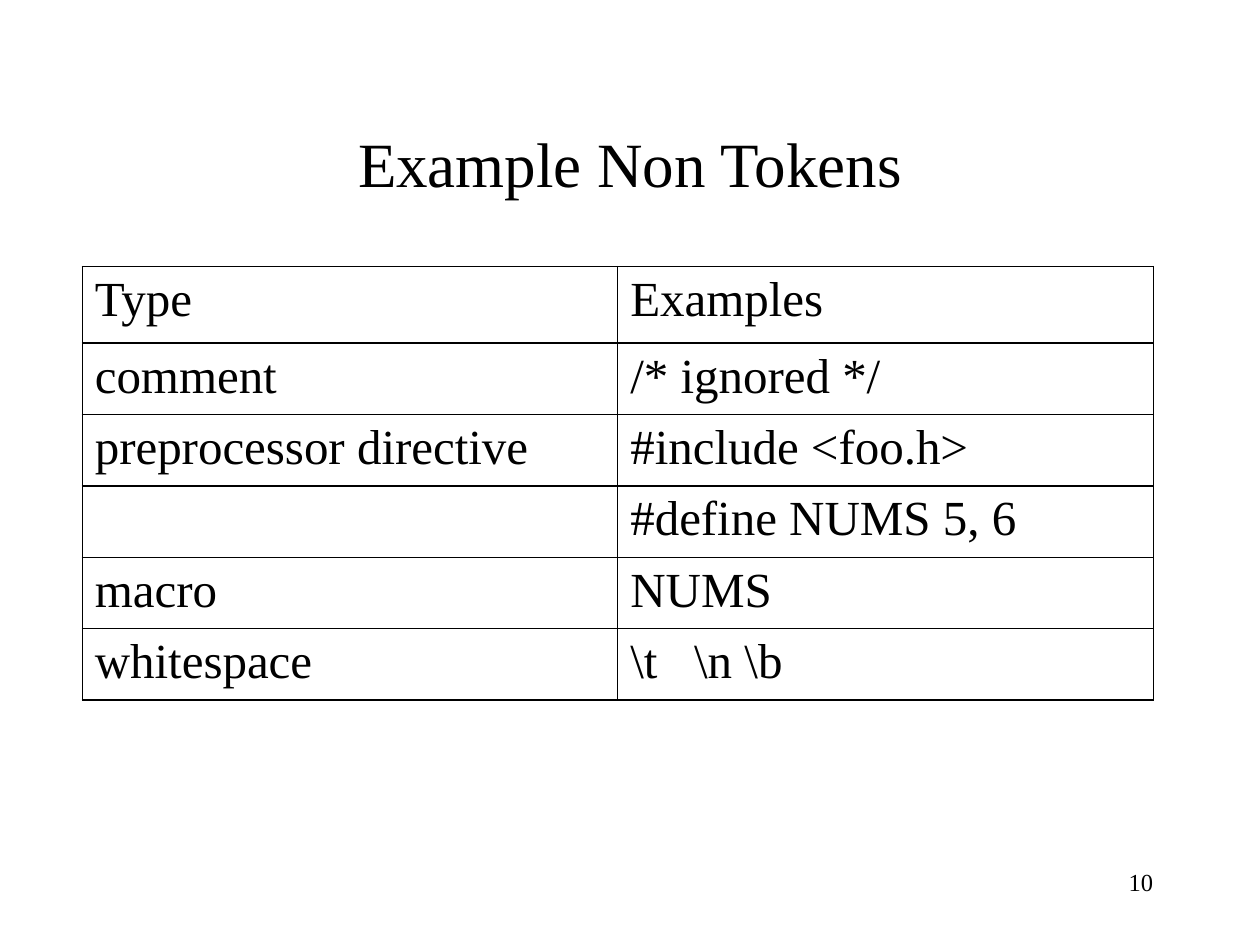
from dataclasses import dataclass

from lxml.etree import SubElement
from pptx import Presentation
from pptx.dml.color import RGBColor
from pptx.enum.text import MSO_ANCHOR, PP_ALIGN
from pptx.oxml.ns import qn
from pptx.slide import Slide
from pptx.table import _Cell
from pptx.text.text import _Paragraph
from pptx.util import Pt


@dataclass(frozen=True)
class Theme:
    font: str = "Times New Roman"
    ink: str = "000000"
    title_size: float = 36
    table_size: float = 28
    number_size: float = 14
    border_width: float = 1
    space_before_percent: int = 20


@dataclass(frozen=True)
class Box:
    left: float
    top: float
    width: float
    height: float


@dataclass(frozen=True)
class Label:
    text: str
    box: Box
    size: float
    alignment: PP_ALIGN
    anchor: MSO_ANCHOR


@dataclass(frozen=True)
class TokenRow:
    kind: str
    example: str
    height: float = 40.8


THEME = Theme()
LABELS = [
    Label("Example Non Tokens", Box(54, 48, 612, 90), THEME.title_size,
          PP_ALIGN.CENTER, MSO_ANCHOR.MIDDLE),
    Label("10", Box(516, 492, 150, 36), THEME.number_size,
          PP_ALIGN.RIGHT, MSO_ANCHOR.TOP),
]
TABLE_BOX = Box(47, 152.4, 612, 247.7)
ROWS = [
    TokenRow("Type", "Examples", 43.7),
    TokenRow("comment", "/* ignored */"),
    TokenRow("preprocessor directive", "#include <foo.h>"),
    TokenRow("", "#define NUMS 5, 6"),
    TokenRow("macro", "NUMS"),
    TokenRow("whitespace", r"\t   \n \b"),
]


def in_points(box: Box) -> tuple[Pt, Pt, Pt, Pt]:
    return Pt(box.left), Pt(box.top), Pt(box.width), Pt(box.height)


def add_text(paragraph: _Paragraph, text: str, size: float) -> None:
    run = paragraph.add_run()
    run.text = text
    run.font.name = THEME.font
    run.font.size = Pt(size)
    run.font.color.rgb = RGBColor.from_string(THEME.ink)


def draw_label(slide: Slide, label: Label) -> None:
    frame = slide.shapes.add_textbox(*in_points(label.box)).text_frame
    frame.word_wrap = True
    frame.vertical_anchor = label.anchor
    paragraph = frame.paragraphs[0]
    paragraph.alignment = label.alignment
    add_text(paragraph, label.text, label.size)


def add_borders(cell: _Cell) -> None:
    properties = cell._tc.get_or_add_tcPr()
    for side in ("lnL", "lnR", "lnT", "lnB"):
        line = SubElement(properties, qn(f"a:{side}"), w=str(Pt(THEME.border_width)))
        fill = SubElement(line, qn("a:solidFill"))
        SubElement(fill, qn("a:srgbClr"), val=THEME.ink)


def add_space_before(paragraph: _Paragraph) -> None:
    spacing = SubElement(paragraph._p.get_or_add_pPr(), qn("a:spcBef"))
    SubElement(spacing, qn("a:spcPct"), val=str(THEME.space_before_percent * 1000))


def draw_cell(cell: _Cell, text: str) -> None:
    add_borders(cell)
    cell.fill.background()
    if text:
        paragraph = cell.text_frame.paragraphs[0]
        add_space_before(paragraph)
        add_text(paragraph, text, THEME.table_size)


def draw_table(slide: Slide, rows: list[TokenRow], box: Box) -> None:
    table = slide.shapes.add_table(len(rows), 2, *in_points(box)).table
    table.first_row = False
    table.horz_banding = False
    for table_row, row in zip(table.rows, rows):
        table_row.height = Pt(row.height)
        for cell, text in zip(table_row.cells, (row.kind, row.example)):
            draw_cell(cell, text)


def main() -> None:
    presentation = Presentation()
    presentation.slide_width = Pt(720)
    presentation.slide_height = Pt(540)
    slide = presentation.slides.add_slide(presentation.slide_layouts[6])
    draw_table(slide, ROWS, TABLE_BOX)
    for label in LABELS:
        draw_label(slide, label)
    presentation.save("out.pptx")


if __name__ == "__main__":
    main()
